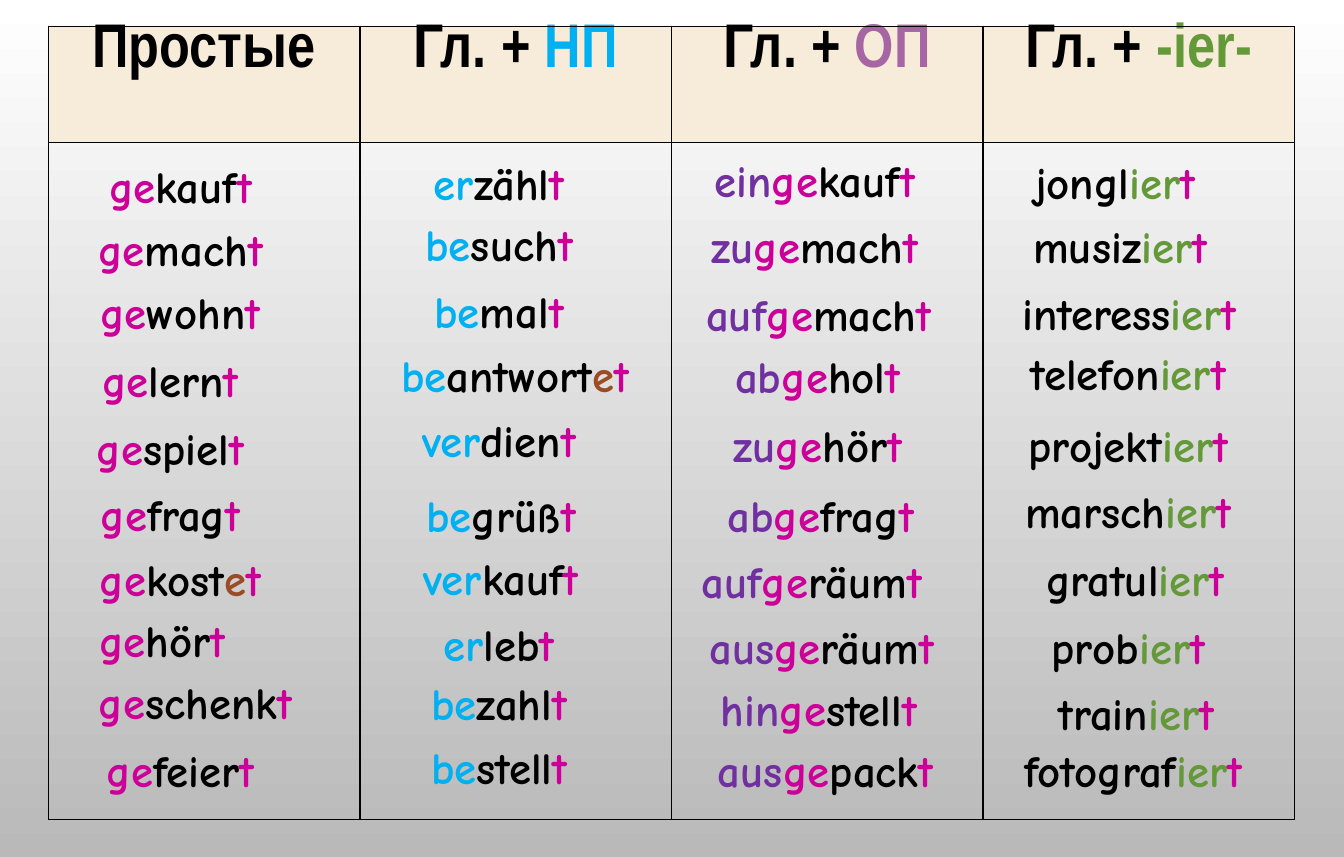
from lxml import etree
from pptx import Presentation
from pptx.dml.color import RGBColor
from pptx.enum.shapes import MSO_SHAPE
from pptx.enum.text import MSO_ANCHOR, PP_ALIGN
from pptx.oxml.ns import qn
from pptx.util import Pt

PX = 9144
ROUND = MSO_SHAPE.ROUNDED_RECTANGLE
CENTER = PP_ALIGN.CENTER
MIDDLE = MSO_ANCHOR.MIDDLE

BLACK = RGBColor(0x00, 0x00, 0x00)
WHITE = RGBColor(0xFF, 0xFF, 0xFF)
GRAY = RGBColor(0xB9, 0xB9, 0xB9)
CREAM = RGBColor(0xF7, 0xEB, 0xD9)
BLUE = RGBColor(0x00, 0xB0, 0xF0)
MAUVE = RGBColor(0xA6, 0x66, 0xA3)
GREEN = RGBColor(0x64, 0x99, 0x39)
PINK = RGBColor(0xCC, 0x00, 0x99)
PURPLE = RGBColor(0x70, 0x30, 0xA0)
BROWN = RGBColor(0x9B, 0x4C, 0x25)

TINTS = {"НП": BLUE, "ОП": MAUVE, "-ier-": GREEN,
         "ge": PINK, "t": PINK, "e": BROWN, "ier": GREEN}
TINTS.update(dict.fromkeys(("er", "be", "ver"), BLUE))
TINTS.update(dict.fromkeys(("ein", "zu", "auf", "ab", "aus", "hin"), PURPLE))

HEADS = ("Простые", "Гл. + |НП", "Гл. + |ОП", "Гл. + |-ier-")
VERBS = (
    (("ge|kauf|t", 33, 153), ("ge|mach|t", 33, 215), ("ge|wohn|t", 33, 278),
     ("ge|lern|t", 23, 345), ("ge|spiel|t", 23, 412), ("ge|frag|t", 23, 478),
     ("ge|kost|e|t", 33, 542), ("ge|hör|t", 15, 603),
     ("ge|schenk|t", 48, 664), ("ge|feier|t", 33, 732)),
    (("er|zähl|t", 349, 150), ("be|such|t", 349, 210), ("be|mal|t", 349, 277),
     ("be|antwort|e|t", 365, 340), ("ver|dien|t", 349, 405),
     ("be|grüß|t", 351, 479), ("ver|kauf|t", 351, 541), ("er|leb|t", 349, 607),
     ("be|zahl|t", 349, 665), ("be|stell|t", 349, 729)),
    (("ein|ge|kauf|t", 662, 147), ("zu|ge|mach|t", 662, 212),
     ("auf|ge|mach|t", 666, 280), ("ab|ge|hol|t", 665, 341),
     ("zu|ge|hör|t", 665, 410), ("ab|ge|frag|t", 668, 479),
     ("auf|ge|räum|t", 659, 544), ("aus|ge|räum|t", 669, 610),
     ("hin|ge|stell|t", 666, 671), ("aus|ge|pack|t", 673, 732)),
    (("jongl|ier|t", 960, 149), ("musiz|ier|t", 965, 212),
     ("interess|ier|t", 974, 279), ("telefon|ier|t", 973, 338),
     ("projekt|ier|t", 973, 410), ("marsch|ier|t", 973, 475),
     ("gratul|ier|t", 980, 542), ("prob|ier|t", 973, 610),
     ("train|ier|t", 981, 675), ("fotograf|ier|t", 978, 732)),
)


def write(frame, text, font, size):
    para = frame.paragraphs[0]
    para.alignment = CENTER
    para.font.name = font
    para.font.size = Pt(size)
    para.font.bold = True
    for part in text.split("|"):
        run = para.add_run()
        run.text = part
        run.font.color.rgb = TINTS.get(part, BLACK)
    return para


def edge(cell):
    props = cell._tc.get_or_add_tcPr()
    for spot, side in enumerate(("a:lnL", "a:lnR", "a:lnT", "a:lnB")):
        line = etree.Element(qn(side), w=str(Pt(1)))
        fill = etree.SubElement(line, qn("a:solidFill"))
        etree.SubElement(fill, qn("a:srgbClr"), val=str(BLACK))
        props.insert(spot, line)


def grid(slide, x, y, w, h, top):
    frame = slide.shapes.add_table(2, len(HEADS), x * PX, y * PX, w * PX, h * PX)
    table = frame.table
    table.first_row = table.horz_banding = False
    table.rows[0].height = top * PX
    table.rows[1].height = (h - top) * PX
    for col, text in enumerate(HEADS):
        head, body = table.cell(0, col), table.cell(1, col)
        head.fill.solid()
        head.fill.fore_color.rgb = CREAM
        head.margin_top = head.margin_bottom = 0
        para = write(head.text_frame, text, "Arial Narrow", 44)
        para.line_spacing = 0.9
        body.fill.background()
        edge(head)
        edge(body)


def verb(slide, text, x, y, w, h):
    shape = slide.shapes.add_shape(ROUND, x * PX, y * PX, w * PX, h * PX)
    shape.shadow.inherit = False
    shape.fill.background()
    shape.line.fill.background()
    shape.text_frame.word_wrap = True
    shape.text_frame.vertical_anchor = MIDDLE
    write(shape.text_frame, text, "Comic Neue", 32)


def shade(slide):
    fill = slide.background.fill
    fill.gradient()
    fill.gradient_angle = 270
    for stop, color in zip(fill.gradient_stops, (WHITE, GRAY)):
        stop.color.rgb = color


def main():
    deck = Presentation()
    deck.slide_width = 1333 * PX
    deck.slide_height = 850 * PX
    slide = deck.slides.add_slide(deck.slide_layouts[6])
    shade(slide)
    grid(slide, 48, 26, 1236, 787, 115)
    for group in VERBS:
        for text, x, y in group:
            verb(slide, text, x, y, 292, 63)
    deck.save("out.pptx")


if __name__ == "__main__":
    main()
